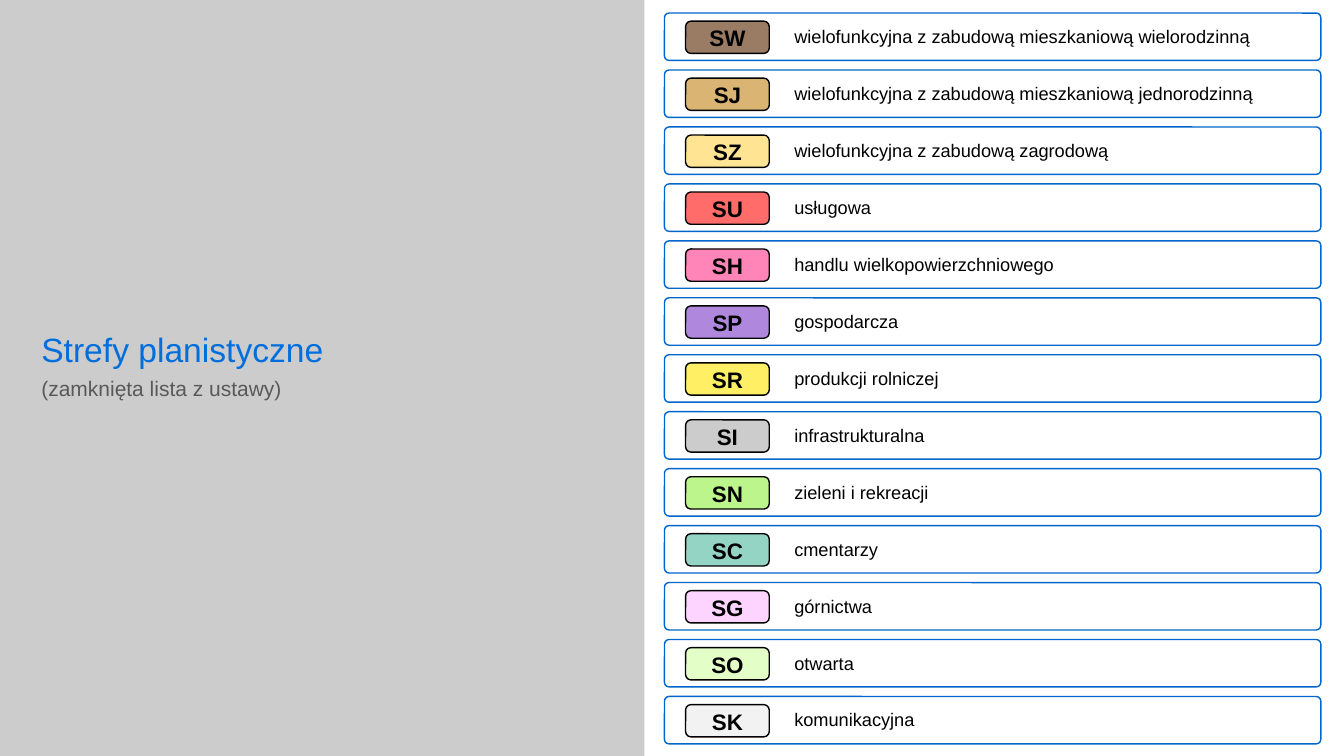
from dataclasses import dataclass

from pptx import Presentation
from pptx.dml.color import RGBColor
from pptx.enum.shapes import MSO_SHAPE
from pptx.enum.text import MSO_ANCHOR, MSO_AUTO_SIZE, PP_ALIGN
from pptx.util import Inches, Pt

RECTANGLE, ROUNDED = MSO_SHAPE.RECTANGLE, MSO_SHAPE.ROUNDED_RECTANGLE
LEFT, CENTER, MIDDLE = PP_ALIGN.LEFT, PP_ALIGN.CENTER, MSO_ANCHOR.MIDDLE
NO_AUTOFIT = MSO_AUTO_SIZE.NONE
WIDTH, HEIGHT = 13.33, 7.5
TITLE_ONLY = 5


@dataclass(frozen=True)
class Theme:
    font: str = "Arial"
    panel: str = "CCCCCC"
    title: str = "006EDC"
    subtitle: str = "595959"
    card: str = "FFFFFF"
    card_line: str = "0066CC"
    ink: str = "000000"
    title_size: int = 24
    subtitle_size: int = 15
    code_size: int = 16
    name_size: int = 13
    line_width: int = 1


THEME = Theme()

# Zone code, badge colour, name
ZONES = [
    ("SW", "9A7C64", "wielofunkcyjna z zabudową mieszkaniową wielorodzinną"),
    ("SJ", "D9B473", "wielofunkcyjna z zabudową mieszkaniową jednorodzinną"),
    ("SZ", "FFE493", "wielofunkcyjna z zabudową zagrodową"),
    ("SU", "FF6C69", "usługowa"),
    ("SH", "FF84B7", "handlu wielkopowierzchniowego"),
    ("SP", "AF88DE", "gospodarcza"),
    ("SR", "FEEF64", "produkcji rolniczej"),
    ("SI", "CCCCCC", "infrastrukturalna"),
    ("SN", "BBF58B", "zieleni i rekreacji"),
    ("SC", "94D4C4", "cmentarzy"),
    ("SG", "FCD4FF", "górnictwa"),
    ("SO", "E3FFC7", "otwarta"),
    ("SK", "F2F2F2", "komunikacyjna"),
]


def apply(target, values):
    for name, value in values.items():
        setattr(target, name, value)


def write(paragraph, text, size, color, bold=False, alignment=LEFT):
    paragraph.alignment = alignment
    run = paragraph.add_run()
    run.text = text
    apply(run.font, {"name": THEME.font, "size": Pt(size), "bold": bold})
    run.font.color.rgb = RGBColor.from_string(color)


def add_box(slide, kind, box, fill, line=None):
    shape = slide.shapes.add_shape(kind, *map(Inches, box))
    shape.shadow.inherit = False
    shape.fill.solid()
    shape.fill.fore_color.rgb = RGBColor.from_string(fill)
    if line:
        shape.line.color.rgb = RGBColor.from_string(line)
        shape.line.width = Pt(THEME.line_width)
    else:
        shape.line.fill.background()
    return shape


def add_label(slide, box, text, **style):
    frame = slide.shapes.add_textbox(*map(Inches, box)).text_frame
    apply(frame, {"word_wrap": True, "vertical_anchor": MIDDLE})
    write(frame.paragraphs[0], text, color=THEME.ink, **style)


def add_title_panel(slide, box):
    left, top, width, height = box
    panel = add_box(slide, RECTANGLE, box, THEME.panel)
    title = slide.shapes.title
    title.element.addprevious(panel.element)  # panel goes behind the title
    apply(title, {"left": Inches(left + 0.31), "top": Inches(top + 2.46),
                  "width": Inches(width * 0.87), "height": Inches(2.36)})
    frame = title.text_frame
    apply(frame, {"vertical_anchor": MIDDLE, "word_wrap": True,
                  "auto_size": NO_AUTOFIT})
    heading, subtitle = frame.paragraphs[0], frame.add_paragraph()
    write(heading, "Strefy planistyczne", THEME.title_size, THEME.title)
    write(subtitle, "(zamknięta lista z ustawy)", THEME.subtitle_size, THEME.subtitle)
    apply(heading, {"line_spacing": 0.9, "space_before": Pt(0)})
    apply(subtitle, {"line_spacing": 0.9, "space_before": Pt(6)})


def add_zone(slide, box, code, color, name):
    left, top, width, height = box
    # Card
    card = add_box(slide, ROUNDED, box, THEME.card, THEME.card_line)
    card.adjustments[0] = 0.096
    # Badge with code, the label as wide as the badge
    badge_left, badge_width = left + 0.21, 0.83
    add_box(slide, ROUNDED, (badge_left, top + 0.08, badge_width, 0.32), color, THEME.ink)
    add_label(slide, (badge_left, top + 0.06, badge_width, 0.37), code,
              size=THEME.code_size, bold=True, alignment=CENTER)
    # Zone name
    add_label(slide, (left + 1.19, top + 0.07, width - 1.24, 0.32), name,
              size=THEME.name_size)


def add_zone_list(slide, box):
    left, top, width, height = box
    card_height = 0.47
    pitch = (height - card_height) / (len(ZONES) - 1)
    for row, zone in enumerate(ZONES):
        add_zone(slide, (left, top + row * pitch, width, card_height), *zone)


def main():
    presentation = Presentation()
    apply(presentation, {"slide_width": Inches(WIDTH), "slide_height": Inches(HEIGHT)})
    slide = presentation.slides.add_slide(presentation.slide_layouts[TITLE_ONLY])
    add_title_panel(slide, (0, 0, 6.39, HEIGHT))
    add_zone_list(slide, (6.59, 0.13, 6.51, 7.25))
    presentation.save("out.pptx")


if __name__ == "__main__":
    main()
